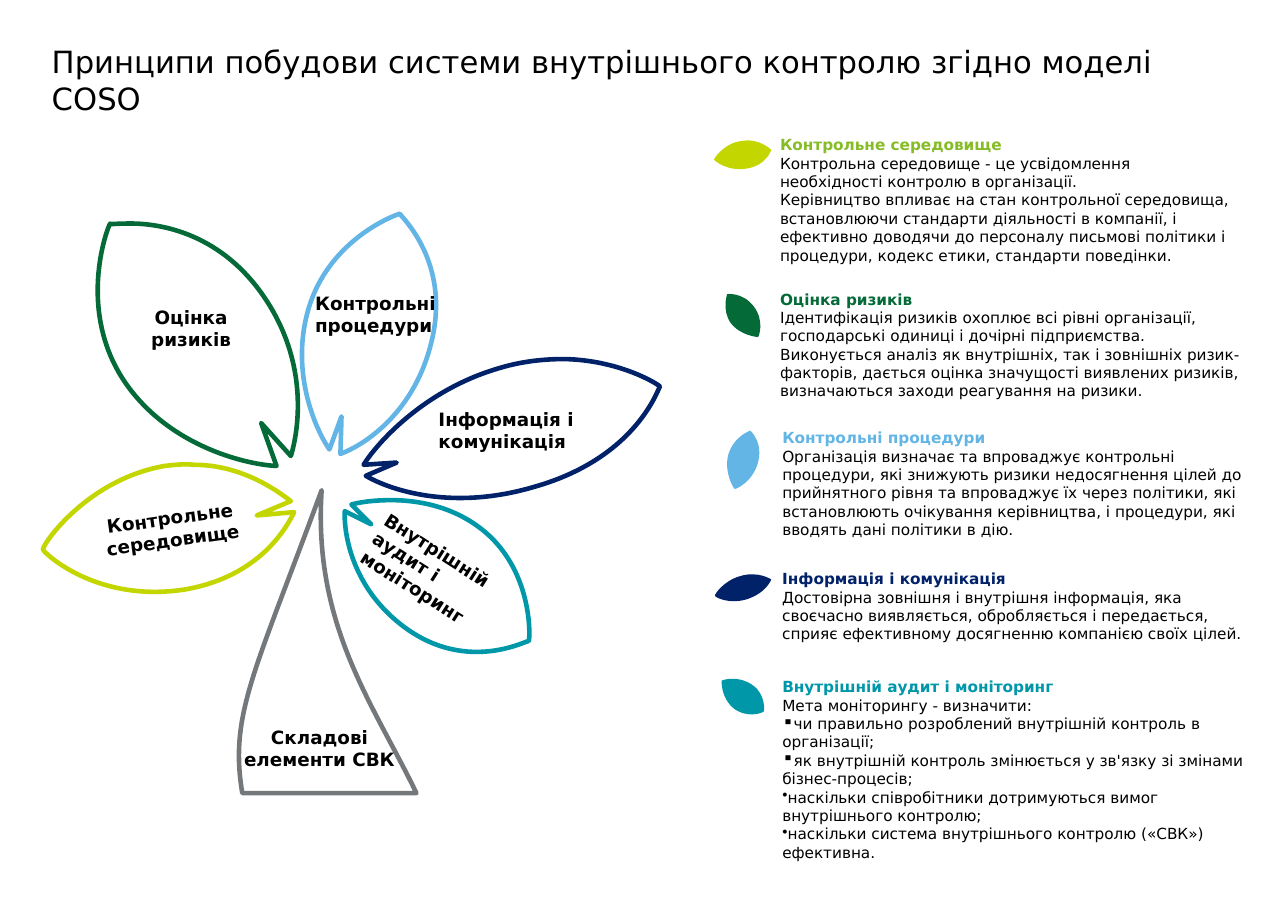
from dataclasses import dataclass

from lxml import etree
from pptx import Presentation
from pptx import util as u
from pptx.dml.color import RGBColor
from pptx.enum import text
from pptx.oxml.ns import qn

FONT = "DejaVu Sans"
BLACK, WHITE, GRAY = "000000", "FFFFFF", "75787B"
LIME, GREEN, SKY, NAVY, TEAL = "C4D600", "046A38", "62B5E5", "012169", "0097A9"


@dataclass
class Outline:
    """A start point, then lines (x, y) and Bezier curves (six numbers)."""
    color: str
    start: tuple[float, float]
    segments: list[tuple[float, ...]]
    fill: str | None = None


@dataclass
class Label:
    wording: str
    frame: tuple[float, float, float, float]
    align: text.PP_ALIGN = text.PP_ALIGN.LEFT
    rotation: float = 0


@dataclass
class Principle:
    heading: str
    color: str
    frame: tuple[float, float, float, float]
    lines: list[str]
    leaf: Outline
    bullets: str = ""


PRINCIPLES = [
    Principle("Контрольне середовище", "86BC25", (7.08, 1.23, 4.1, 1.18), [
        "Контрольна середовище - це усвідомлення необхідності контролю в організації.",
        "Керівництво впливає на стан контрольної середовища, встановлюючи стандарти "
        "діяльності в компанії, і ефективно доводячи до персоналу письмові політики і "
        "процедури, кодекс етики, стандарти поведінки."],
        Outline(LIME, (6.48, 1.45), [
            (6.48, 1.44, 6.57, 1.3, 6.73, 1.28), (6.89, 1.25, 7, 1.36, 7, 1.36),
            (7, 1.36, 6.96, 1.5, 6.78, 1.53), (6.6, 1.56, 6.49, 1.46, 6.48, 1.45)])),
    Principle("Оцінка ризиків", GREEN, (7.08, 2.63, 4.19, 1.18), [
        "Ідентифікація ризиків охоплює всі рівні організації, господарські одиниці "
        "і дочірні підприємства.",
        "Виконується аналіз як внутрішніх, так і зовнішніх ризик-факторів, дається "
        "оцінка значущості виявлених ризиків, визначаються заходи реагування на ризики."],
        Outline(GREEN, (6.88, 3.06), [
            (6.88, 3.06, 6.72, 3.05, 6.63, 2.93), (6.55, 2.81, 6.6, 2.67, 6.6, 2.67),
            (6.6, 2.67, 6.74, 2.65, 6.84, 2.78), (6.94, 2.91, 6.89, 3.05, 6.88, 3.06)])),
    Principle("Контрольні процедури", SKY, (7.1, 3.89, 4.19, 1.01), [
        "Організація визначає та впроваджує контрольні процедури, які знижують ризики "
        "недосягнення цілей до прийнятного рівня та впроваджує їх через політики, які "
        "встановлюють очікування керівництва, і процедури, які вводять дані політики в дію."],
        Outline(SKY, (6.67, 4.44), [
            (6.66, 4.44, 6.57, 4.29, 6.61, 4.13), (6.66, 3.96, 6.81, 3.91, 6.81, 3.91),
            (6.81, 3.91, 6.93, 4.01, 6.88, 4.2), (6.83, 4.38, 6.68, 4.44, 6.67, 4.44)])),
    Principle("Інформація і комунікація", NAVY, (7.1, 5.17, 4.23, 0.84), [
        "Достовірна зовнішня і внутрішня інформація, яка своєчасно виявляється, "
        "обробляється і передається, сприяє ефективному досягненню компанією своїх цілей."],
        Outline(NAVY, (6.49, 5.41), [
            (6.48, 5.4, 6.57, 5.27, 6.72, 5.23), (6.88, 5.18, 7, 5.26, 7, 5.26),
            (7, 5.26, 6.96, 5.38, 6.78, 5.44), (6.61, 5.49, 6.49, 5.42, 6.49, 5.41)])),
    Principle("Внутрішній аудит і моніторинг", TEAL, (7.1, 6.15, 4.22, 1.68), [
        "Мета моніторингу - визначити:",
        "чи правильно розроблений внутрішній контроль в організації;",
        "як внутрішній контроль змінюється у зв'язку зі змінами бізнес-процесів;",
        "наскільки співробітники дотримуються вимог внутрішнього контролю;",
        "наскільки система внутрішнього контролю («СВК») ефективна."],
        Outline(TEAL, (6.55, 6.18), [
            (6.56, 6.17, 6.71, 6.13, 6.83, 6.22), (6.95, 6.3, 6.94, 6.46, 6.93, 6.46),
            (6.94, 6.46, 6.81, 6.53, 6.67, 6.44), (6.54, 6.34, 6.55, 6.19, 6.55, 6.18)]),
        bullets="▪▪••"),
]

PLANT = [
    Outline(LIME, (1.76, 4.22), [
        (2.19, 4.22, 2.51, 4.45, 2.64, 4.55), (2.33, 4.68), (2.67, 4.65),
        (2.6, 4.79, 2.36, 5.23, 1.69, 5.35), (0.89, 5.48, 0.41, 5.03, 0.39, 4.99),
        (0.38, 4.95, 0.79, 4.35, 1.5, 4.23), (1.59, 4.22, 1.68, 4.21, 1.76, 4.22)]),
    Outline(GREEN, (1.13, 2.03), [
        (1.37, 2.02, 1.93, 2.07, 2.35, 2.63), (2.82, 3.26, 2.71, 3.91, 2.64, 4.14),
        (2.37, 3.84), (2.51, 4.23), (2.26, 4.22, 1.58, 4.07, 1.17, 3.52),
        (0.67, 2.85, 0.98, 2.05, 1, 2.03), (0.99, 2.04, 1.04, 2.03, 1.13, 2.03)], WHITE),
    Outline(SKY, (3.63, 1.94), [
        (3.62, 1.95, 4.11, 2.37, 3.91, 3.13), (3.74, 3.79, 3.26, 4.06, 3.09, 4.12),
        (3.1, 3.78), (2.99, 4.08), (2.87, 3.91, 2.64, 3.4, 2.79, 2.84),
        (2.97, 2.16, 3.62, 1.94, 3.63, 1.94)]),
    Outline(NAVY, (5.12, 3.26), [
        (5.64, 3.27, 5.99, 3.5, 5.99, 3.51), (5.98, 3.5, 5.8, 4.15, 4.85, 4.42),
        (4.04, 4.66, 3.47, 4.41, 3.32, 4.32), (3.6, 4.2), (3.3, 4.22),
        (3.41, 4.04, 3.84, 3.54, 4.54, 3.34), (4.74, 3.28, 4.94, 3.26, 5.12, 3.26)]),
    Outline(TEAL, (3.55, 4.54), [
        (3.78, 4.54, 4.08, 4.59, 4.34, 4.78), (4.85, 5.15, 4.81, 5.81, 4.8, 5.82),
        (4.8, 5.8, 4.26, 6.12, 3.68, 5.7), (3.16, 5.32, 3.12, 4.78, 3.13, 4.64),
        (3.37, 4.76), (3.19, 4.58), (3.26, 4.56, 3.39, 4.54, 3.55, 4.54)]),
    Outline(GRAY, (2.92, 4.45), [
        (2.31, 6.11, 2.08, 6.49, 2.2, 7.2), (3.78, 7.2),
        (3.39, 6.39, 2.84, 5.68, 2.92, 4.45)]),
]

CENTER = text.PP_ALIGN.CENTER
LABELS = [
    Label("Складові елементи СВК", (2.2, 6.59, 1.4, 0.4), CENTER),
    Label("Контрольне середовище", (0.78, 4.6, 1.55, 0.4), CENTER, 352.1),
    Label("Оцінка ризиків", (1.07, 2.78, 1.33, 0.4), CENTER),
    Label("Контрольні процедури", (2.86, 2.65, 1.1, 0.4)),
    Label("Інформація і комунікація", (3.98, 3.71, 1.55, 0.4)),
    Label("Внутрішній аудит і моніторинг", (3.28, 4.98, 1.55, 0.61), rotation=32.4),
]


def rgb(color: str) -> RGBColor:
    return RGBColor.from_string(color)


def add_box(page, frame: tuple, anchor=text.MSO_ANCHOR.TOP):
    box = page.shapes.add_textbox(*map(u.Inches, frame))
    body = box.text_frame
    body.word_wrap = True
    body.vertical_anchor = anchor
    body.margin_left = body.margin_right = body.margin_top = body.margin_bottom = 0
    return box


def write(para, wording: str, size: float = 10, color: str = BLACK, bold: bool = False,
          align=text.PP_ALIGN.LEFT, bullet: str = "") -> None:
    para.alignment = align
    if bullet:
        etree.SubElement(para._p.get_or_add_pPr(), qn("a:buChar"), char=bullet)
    span = para.add_run()
    span.text = wording
    span.font.name, span.font.size, span.font.bold = FONT, u.Pt(size), bold
    span.font.color.rgb = rgb(color)


def bend(shape, segments: list[tuple[float, ...]]) -> None:
    """Join each three lines that stand for a curve into one Bezier curve."""
    lines = iter(list(shape._element.iter(qn("a:lnTo"))))
    for segment in segments:
        line = next(lines)
        if len(segment) == 6:
            curve = etree.Element(qn("a:cubicBezTo"))
            line.addprevious(curve)
            for part in (line, next(lines), next(lines)):
                curve.append(part[0])
                part.getparent().remove(part)


def draw_outline(page, outline: Outline, fill: str | None, line_width: float = 0) -> None:
    builder = page.shapes.build_freeform(*map(u.Inches, outline.start))
    points = [(u.Inches(segment[i]), u.Inches(segment[i + 1]))
              for segment in outline.segments for i in range(0, len(segment), 2)]
    builder.add_line_segments(points, close=True)
    shape = builder.convert_to_shape()
    bend(shape, outline.segments)
    shape.shadow.inherit = False
    if fill:
        shape.fill.solid()
        shape.fill.fore_color.rgb = rgb(fill)
    else:
        shape.fill.background()
    if line_width:
        shape.line.color.rgb = rgb(outline.color)
        shape.line.width = u.Pt(line_width)
        etree.SubElement(shape.line._get_or_add_ln(), qn("a:round"))
    else:
        shape.line.fill.background()


def draw_principle(page, principle: Principle) -> None:
    body = add_box(page, principle.frame).text_frame
    write(body.paragraphs[0], principle.heading, color=principle.color, bold=True)
    plain_count = len(principle.lines) - len(principle.bullets)
    bullets = [""] * plain_count + list(principle.bullets)
    for line, bullet in zip(principle.lines, bullets):
        write(body.add_paragraph(), line, bullet=bullet)
    draw_outline(page, principle.leaf, principle.leaf.color)


def draw_label(page, label: Label) -> None:
    box = add_box(page, label.frame, text.MSO_ANCHOR.MIDDLE)
    box.rotation = label.rotation
    write(box.text_frame.paragraphs[0], label.wording, size=12, bold=True, align=label.align)


def main() -> None:
    deck = Presentation()
    deck.slide_width, deck.slide_height = u.Inches(11.69), u.Inches(8.27)
    page = deck.slides.add_slide(deck.slide_layouts[6])
    title = add_box(page, (0.47, 0.39, 10.74, 0.4))
    write(title.text_frame.paragraphs[0],
          "Принципи побудови системи внутрішнього контролю згідно моделі COSO", size=20)
    for principle in PRINCIPLES:
        draw_principle(page, principle)
    for outline in PLANT:
        draw_outline(page, outline, outline.fill, line_width=3)
    for label in LABELS:
        draw_label(page, label)
    deck.save("out.pptx")


if __name__ == "__main__":
    main()
